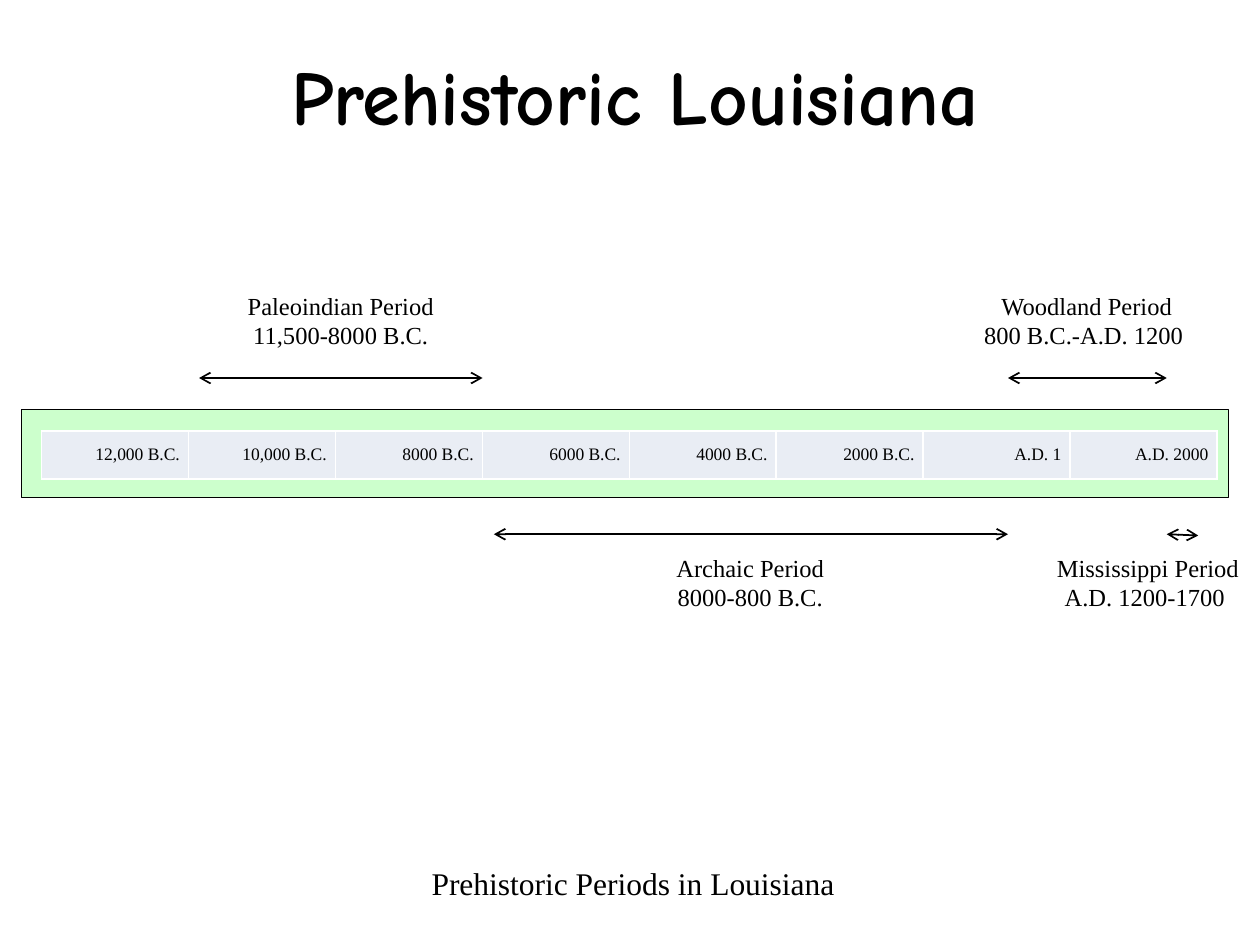
from lxml.etree import SubElement
from pptx import Presentation
from pptx.dml.color import RGBColor
from pptx.enum.shapes import MSO_CONNECTOR, MSO_SHAPE
from pptx.enum.text import MSO_ANCHOR, PP_ALIGN
from pptx.oxml import parse_xml
from pptx.oxml.ns import nsdecls, qn
from pptx.util import Inches, Pt

BLACK = RGBColor(0x00, 0x00, 0x00)
GREEN = RGBColor(0xCC, 0xFF, 0xCC)
PALE = RGBColor(0xE9, 0xED, 0xF4)
SERIF = "Times New Roman"


def write(frame, lines, size, align=PP_ALIGN.CENTER, font=SERIF, bold=False):
    for i, line in enumerate(lines):
        para = frame.paragraphs[0] if i == 0 else frame.add_paragraph()
        para.alignment = align
        run = para.add_run()
        run.text = line
        run.font.size = Pt(size)
        run.font.name = font
        run.font.bold = bold
        run.font.color.rgb = BLACK


def add_label(left, top, width, height, lines, size):
    box = slide.shapes.add_textbox(
        Inches(left), Inches(top), Inches(width), Inches(height))
    box.text_frame.word_wrap = True
    write(box.text_frame, lines, size)


prs = Presentation()
prs.slide_width, prs.slide_height = Inches(10), Inches(7.5)
slide = prs.slides.add_slide(prs.slide_layouts[5])

# Title
title = slide.shapes.title
title.left, title.top = Inches(0.33), Inches(0.17)
title.width, title.height = Inches(9.42), Inches(1.17)
title.text_frame.vertical_anchor = MSO_ANCHOR.MIDDLE
write(title.text_frame, ["Prehistoric Louisiana"], 44, font="Comic Neue", bold=True)

# Caption and period labels
add_label(1.33, 6.81, 7.39, 0.4, ["Prehistoric Periods in Louisiana"], 18)
periods = [
    (1.8, 2.26, 1.81, "Paleoindian Period", "11,500-8000 B.C."),
    (5.01, 4.34, 1.89, "Archaic Period", "8000-800 B.C."),
    (7.67, 2.26, 1.91, "Woodland Period", "800 B.C.-A.D. 1200 "),
    (8.22, 4.34, 1.78, "Mississippi Period", "A.D. 1200-1700 "),
]
for left, top, width, name, dates in periods:
    add_label(left, top, width, 0.57, [name, dates], 14)

# Green band behind the timeline
band = slide.shapes.add_shape(
    MSO_SHAPE.RECTANGLE, Inches(0.17), Inches(3.25), Inches(9.58), Inches(0.7))
band.shadow.inherit = False
band.fill.solid()
band.fill.fore_color.rgb = GREEN
band.line.color.rgb = BLACK
band.line.width = Pt(0.75)

# Timeline table
dates = ["12,000 B.C.", "10,000 B.C.", "8000 B.C.", "6000 B.C.",
         "4000 B.C.", "2000 B.C.", "A.D. 1", "A.D. 2000"]
table = slide.shapes.add_table(
    1, len(dates), Inches(0.33), Inches(3.42), Inches(9.33), Inches(0.38)).table
table.first_row = table.horz_banding = False
for cell, date in zip(table.rows[0].cells, dates):
    cell.vertical_anchor = MSO_ANCHOR.MIDDLE
    cell.margin_left = cell.margin_right = Inches(0.07)
    cell.margin_top = cell.margin_bottom = 0
    write(cell.text_frame, [date], 10, PP_ALIGN.RIGHT)
    props = cell._tc.get_or_add_tcPr()
    for side in ("lnL", "lnR", "lnT", "lnB"):
        props.append(parse_xml(
            f'<a:{side} {nsdecls("a")} w="{Pt(1)}"><a:solidFill>'
            f'<a:srgbClr val="FFFFFF"/></a:solidFill></a:{side}>'))
    cell.fill.solid()
    cell.fill.fore_color.rgb = PALE

# Period spans, arrowed at both ends
spans = [(1.58, 3, 3.83, 3), (3.92, 4.24, 8, 4.24),
         (8, 3, 9.26, 3), (9.26, 4.24, 9.51, 4.25)]
for span in spans:
    arrow = slide.shapes.add_connector(
        MSO_CONNECTOR.STRAIGHT, *[Inches(n) for n in span])
    arrow.line.color.rgb = BLACK
    arrow.line.width = Pt(1)
    props = arrow.line._get_or_add_ln()
    for end in ("a:headEnd", "a:tailEnd"):
        SubElement(props, qn(end), type="arrow")
    SubElement(arrow._element.spPr, qn("a:effectLst"))

prs.save("out.pptx")
